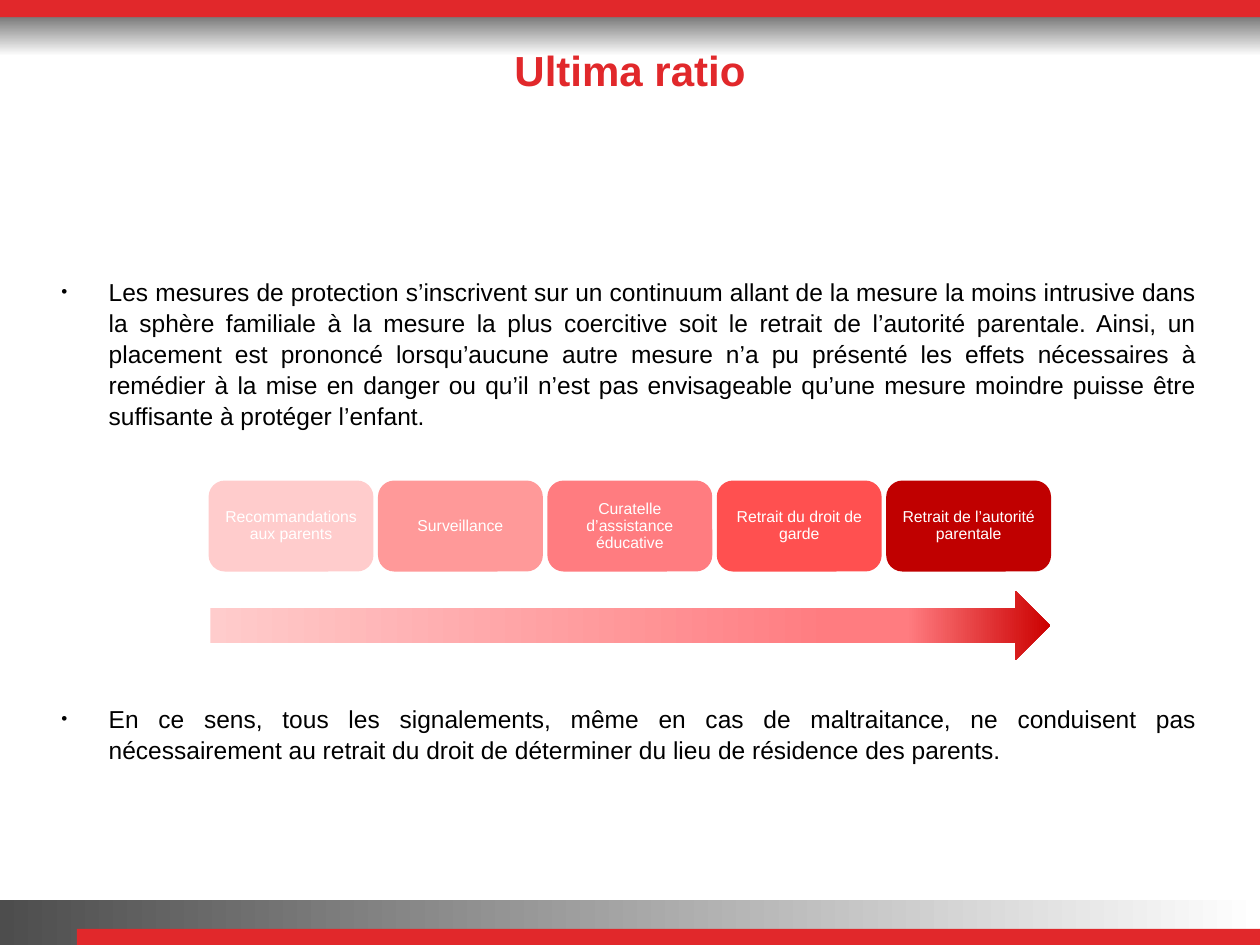
from pptx import Presentation
from pptx.dml.color import RGBColor as Rgb
from pptx.enum.shapes import MSO_SHAPE as Kind
from pptx.enum.text import MSO_ANCHOR as Anchor, PP_ALIGN as Align
from pptx.oxml.ns import qn
from pptx.util import Pt
from lxml.etree import SubElement as Sub

HUES = {
    "red": "E1282B", "white": "FFFFFF", "black": "000000",
    "smoke": "5F5F5F", "coal": "4D4D4D",
    "pale": "FFCCCC", "rose": "FF9999", "pink": "FF7C80",
    "coral": "FF5050", "dark": "C00000", "tip": "CC0000",
}
STEPS = [
    ("Recommandations aux parents", "pale"),
    ("Surveillance", "rose"),
    ("Curatelle d’assistance éducative", "pink"),
    ("Retrait du droit de garde", "coral"),
    ("Retrait de l’autorité parentale", "dark"),
]
POINTS = [
    (154, 92, "Les mesures de protection s’inscrivent sur un continuum allant de "
     "la mesure la moins intrusive dans la sphère familiale à la mesure la plus "
     "coercitive soit le retrait de l’autorité parentale. Ainsi, un placement est "
     "prononcé lorsqu’aucune autre mesure n’a pu présenté les effets nécessaires à "
     "remédier à la mise en danger ou qu’il n’est pas envisageable qu’une mesure "
     "moindre puisse être suffisante à protéger l’enfant."),
    (398, 41, "En ce sens, tous les signalements, même en cas de maltraitance, ne "
     "conduisent pas nécessairement au retrait du droit de déterminer du lieu de "
     "résidence des parents."),
]


def hue(name):
    return Rgb.from_string(HUES[name])


def write(frame, text, size=14, color="black", bold=False, align=Align.CENTER,
          anchor=Anchor.MIDDLE, space=1.0, pad=(7.2, 3.6), bullet=False):
    frame.word_wrap = True
    frame.vertical_anchor = anchor
    frame.margin_left = frame.margin_right = Pt(pad[0])
    frame.margin_top = frame.margin_bottom = Pt(pad[1])
    para = frame.paragraphs[0]
    para.text = text
    para.alignment = align
    para.line_spacing = space
    if bullet:
        props = para._p.get_or_add_pPr()
        props.set("marL", str(Pt(27)))
        props.set("indent", str(-Pt(27)))
        Sub(props, qn("a:buSzPct")).set("val", "70000")
        Sub(props, qn("a:buFont")).set("typeface", "Arial")
        Sub(props, qn("a:buChar")).set("char", "•")
    font = para.runs[0].font
    font.name, font.size, font.bold = "Arial", Pt(size), bold
    font.color.rgb = hue(color)


class Page:
    def __init__(self, slide):
        self.shapes = slide.shapes

    def shape(self, kind, box, color=None, edge=None):
        item = self.shapes.add_shape(kind, *map(Pt, box))
        item.shadow.inherit = False
        if color:
            item.fill.solid()
            item.fill.fore_color.rgb = hue(color)
        if edge:
            item.line.color.rgb = hue(edge)
            item.line.width = Pt(2)
        else:
            item.line.fill.background()
        return item

    def blend(self, kind, box, stops, angle=0):
        """Shape with a gradient; stops are (percent, colour) pairs."""
        item = self.shape(kind, box)
        item.fill.gradient()
        item.fill.gradient_angle = angle
        chain = item._element.spPr.find(".//" + qn("a:gsLst"))
        chain.clear()
        for place, color in stops:
            stop = Sub(chain, qn("a:gs"), pos=str(place * 1000))
            Sub(stop, qn("a:srgbClr"), val=HUES[color])

    def text(self, box, text, **style):
        write(self.shapes.add_textbox(*map(Pt, box)).text_frame, text, **style)

    def step(self, box, text, color):
        item = self.shape(Kind.ROUNDED_RECTANGLE, box, color, edge=color)
        write(item.text_frame, text, size=9, color="white", space=0.9, pad=(2.5, 2.5))


def main():
    deck = Presentation()
    deck.slide_width, deck.slide_height = Pt(720), Pt(540)
    page = Page(deck.slides.add_slide(deck.slide_layouts[6]))

    page.blend(Kind.RECTANGLE, (0, 5, 720, 27), [(0, "smoke"), (100, "white")], 270)
    page.shape(Kind.RECTANGLE, (0, 0, 720, 9.8), "red")
    page.blend(Kind.RECTANGLE, (0, 514.5, 720, 25.5), [(0, "coal"), (100, "white")])
    page.shape(Kind.RECTANGLE, (44, 530.8, 676, 9.2), "red")

    page.text((28, 20, 664, 40), "Ultima ratio", size=24, color="red", bold=True)
    for top, high, text in POINTS:
        page.text((28, top, 663, high), text, align=Align.JUSTIFY,
                  anchor=Anchor.TOP, space=1.05, bullet=True)

    page.blend(Kind.RIGHT_ARROW, (120.2, 337.6, 479.8, 39.6),
               [(0, "pale"), (74, "pink"), (83, "pink"), (100, "tip")])
    for i, (text, color) in enumerate(STEPS):
        page.step((120.2 + 96.8 * i, 275.6, 92.2, 50), text, color)

    deck.save("out.pptx")


if __name__ == "__main__":
    main()
